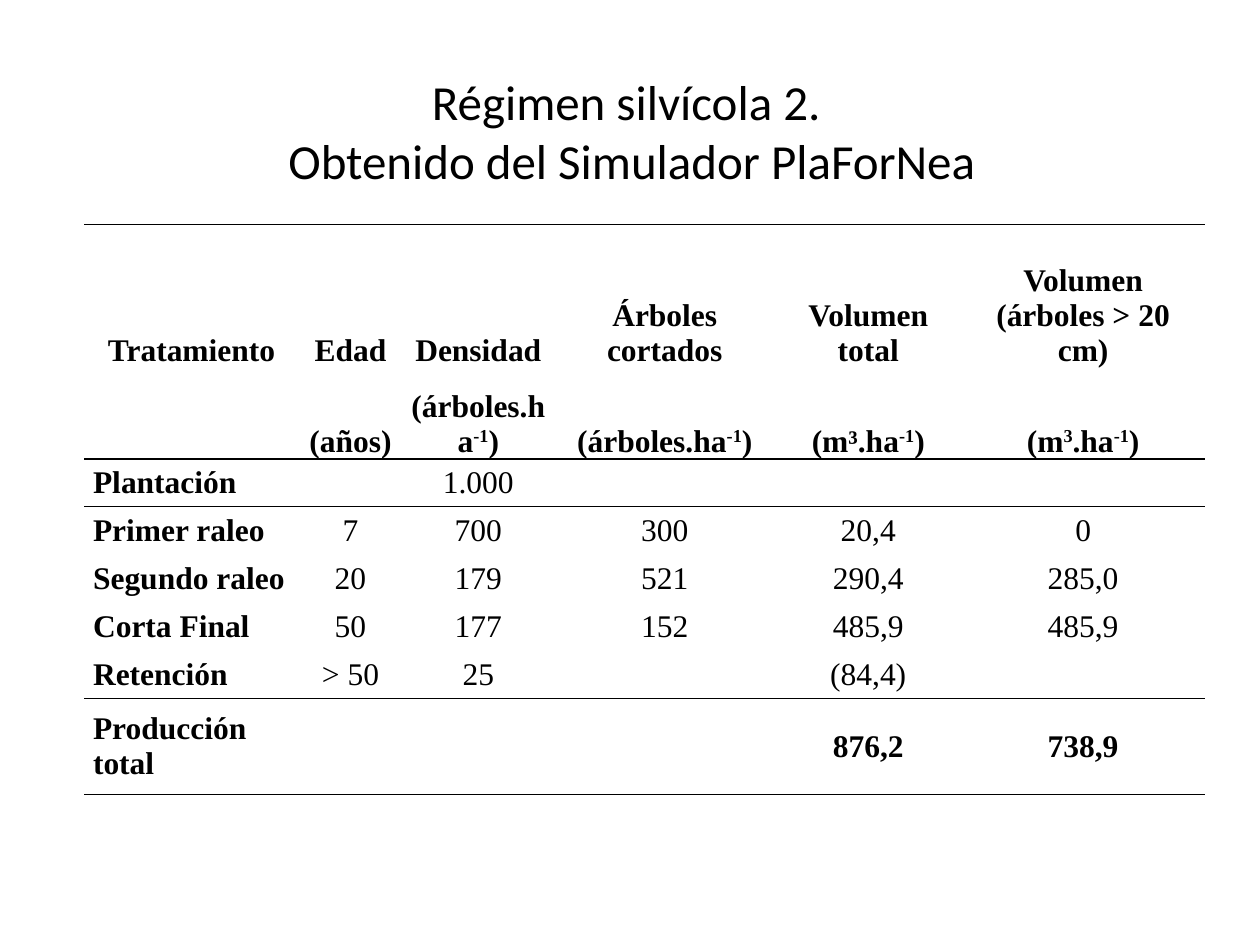
from pptx import Presentation
from pptx.dml.color import RGBColor
from pptx.enum.text import MSO_ANCHOR as Anchor, PP_ALIGN as Align
from pptx.oxml import parse_xml
from pptx.oxml.ns import nsdecls, qn
from pptx.util import Pt

BLACK = RGBColor(0, 0, 0)
WHITE = RGBColor(255, 255, 255)
NO_GRID_STYLE = "{2D5ABB26-0587-4C30-8999-92F81FD0307C}"

# Content: \n starts a paragraph, ^ switches superscript on and off
TITLE = "Régimen silvícola 2.\v Obtenido del Simulador PlaForNea"
ROWS = [
    ["Tratamiento", "Edad", "Densidad", "Árboles cortados", "Volumen total",
     "Volumen\n(árboles > 20 cm)"],
    ["", "(años)", "(árboles.ha^-1^)", "(árboles.ha^-1^)", "(m³.ha^-1^)",
     "(m^3^.ha^-1^)"],
    ["Plantación", "", "1.000", "", "", ""],
    ["Primer raleo", "7", "700", "300", "20,4", "0"],
    ["Segundo raleo", "20", "179", "521", "290,4", "285,0"],
    ["Corta Final", "50", "177", "152", "485,9", "485,9"],
    ["Retención", "> 50", "25", "", "(84,4)", ""],
    ["Producción total", "", "", "", "876,2", "738,9"],
]
HEADER_ROWS = 2
TOTAL_ROW = len(ROWS) - 1
COLUMN_WIDTHS = [122.6, 59, 87.1, 126, 106.6, 139]
ROW_HEIGHTS = [82, 52] + [27.4] * 5 + [54.8]
RULES_ABOVE = {0, HEADER_ROWS, TOTAL_ROW}
RULES_BELOW = {HEADER_ROWS - 1, TOTAL_ROW - 1, TOTAL_ROW}


def style(font, name, size, bold=False):
    font.name, font.size, font.bold = name, Pt(size), bold
    font.color.rgb = BLACK


def add_rule(cell, tag):
    cell._tc.get_or_add_tcPr().insert(0, parse_xml(
        f'<a:{tag} {nsdecls("a")} w="{Pt(1)}"><a:solidFill>'
        f'<a:srgbClr val="{BLACK}"/></a:solidFill></a:{tag}>'))


def write_cell(cell, text, bold, align):
    frame = cell.text_frame
    for number, line in enumerate(text.split("\n")):
        para = frame.add_paragraph() if number else frame.paragraphs[0]
        para.alignment = align
        style(para.font, "Times New Roman", 18, bold)
        for index, part in enumerate(line.split("^")):
            if not part:
                continue
            span = para.add_run()
            span.text = part
            style(span.font, "Times New Roman", 18, bold)
            if index % 2:
                span.font._element.set("baseline", "30000")


deck = Presentation()
deck.slide_width, deck.slide_height = Pt(720), Pt(540)
page = deck.slides.add_slide(deck.slide_layouts[6])

# Title
box = page.shapes.add_textbox(Pt(110.9), Pt(43.2), Pt(493.9), Pt(62.6))
frame = box.text_frame
frame.word_wrap = True
frame.vertical_anchor = Anchor.MIDDLE
para = frame.paragraphs[0]
para.alignment = Align.CENTER
for number, line in enumerate(TITLE.split("\v")):
    if number:
        para.add_line_break()
    span = para.add_run()
    span.text = line
    style(span.font, "Calibri", 28)

# Table
table = page.shapes.add_table(
    len(ROWS), len(COLUMN_WIDTHS), Pt(48.2), Pt(128.2),
    Pt(sum(COLUMN_WIDTHS)), Pt(sum(ROW_HEIGHTS))).table
table.first_row = table.horz_banding = False
table._tbl.tblPr.find(qn("a:tableStyleId")).text = NO_GRID_STYLE
for column, width in zip(table.columns, COLUMN_WIDTHS):
    column.width = Pt(width)
for row, height in zip(table.rows, ROW_HEIGHTS):
    row.height = Pt(height)

for r, texts in enumerate(ROWS):
    header = r < HEADER_ROWS
    for c, text in enumerate(texts):
        cell = table.cell(r, c)
        cell.margin_left = cell.margin_right = Pt(5)
        cell.margin_top = cell.margin_bottom = 0
        cell.vertical_anchor = Anchor.BOTTOM if header else Anchor.MIDDLE
        cell.fill.solid()
        cell.fill.fore_color.rgb = WHITE
        bold = header or c == 0 or r == TOTAL_ROW
        align = Align.JUSTIFY if c == 0 and not header else Align.CENTER
        write_cell(cell, text, bold, align)
        # The schema wants the top line before the bottom one
        if r in RULES_BELOW:
            add_rule(cell, "lnB")
        if r in RULES_ABOVE:
            add_rule(cell, "lnT")

deck.save("out.pptx")
